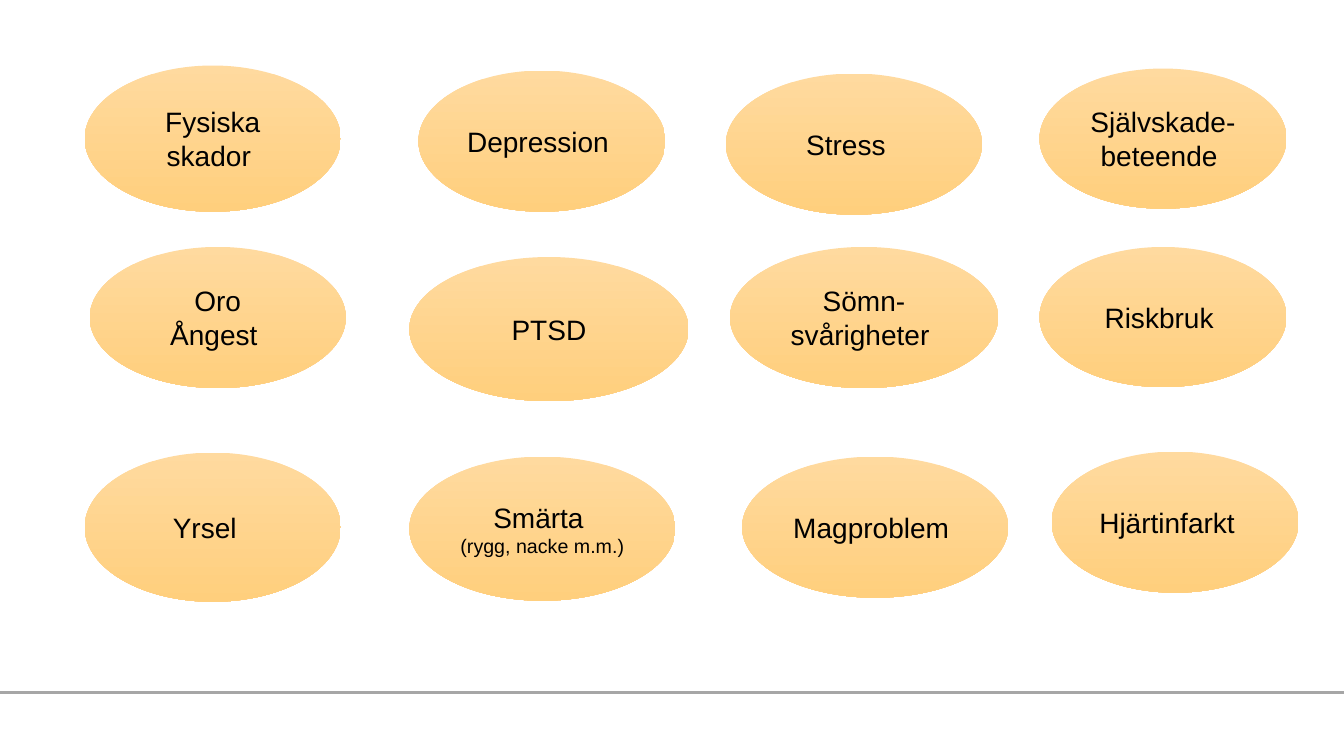
from lxml import etree
from pptx import Presentation
from pptx import util as u
from pptx.dml.color import RGBColor
from pptx.enum import shapes, text
from pptx.oxml.ns import qn

PEACH = RGBColor(0xFF, 0xDA, 0x9F)
AMBER = RGBColor(0xFF, 0xCF, 0x7D)
BLACK = RGBColor(0, 0, 0)
GREY = RGBColor(0xA6, 0xA6, 0xA6)

SIDE_INSET = 0.1
LEFT_SHIFT = 0.08  # extra right inset for labels set left of centre

# Each symptom: left, top, width, height, label lines, extra right inset
SYMPTOMS = [
    # Top row
    (0.84, 0.65, 2.54, 1.45, ["Fysiska skador "], 0),
    (4.15, 0.7, 2.45, 1.4, ["Depression "], 0),
    (7.2, 0.73, 2.54, 1.4, ["Stress "], LEFT_SHIFT),
    (10.31, 0.68, 2.45, 1.39, ["Självskade-beteende "], 0),
    # Middle row
    (0.89, 2.45, 2.54, 1.4, ["Oro", "Ångest "], 0),
    (4.06, 2.55, 2.77, 1.43, ["PTSD"], 0),
    (7.24, 2.45, 2.66, 1.4, ["Sömn-", "svårigheter "], 0),
    (10.31, 2.45, 2.45, 1.39, ["Riskbruk "], 0),
    # Bottom row
    (0.84, 4.49, 2.54, 1.48, ["Yrsel "], LEFT_SHIFT),
    (4.06, 4.53, 2.64, 1.43, ["Smärta "], 0),
    (7.36, 4.53, 2.64, 1.4, ["Magproblem "], 0),
    (10.43, 4.48, 2.45, 1.4, ["Hjärtinfarkt "], LEFT_SHIFT),
]
DETAILS = {"Smärta ": "(rygg, nacke m.m.) "}


def add_footer_rule(page, top, width):
    rule = page.shapes.add_connector(
        shapes.MSO_CONNECTOR.STRAIGHT,
        0, u.Inches(top), width, u.Inches(top))
    rule.line.color.rgb = GREY
    rule.line.width = u.Pt(1.5)
    etree.SubElement(rule._element.spPr, qn("a:effectLst"))


def add_symptom(page, left, top, width, height, lines, extra_inset):
    oval = page.shapes.add_shape(
        shapes.MSO_SHAPE.OVAL,
        *(u.Inches(length) for length in (left, top, width, height)))
    oval.shadow.inherit = False
    oval.line.fill.background()

    # Vertical gradient, lightest at the top
    oval.fill.gradient()
    oval.fill.gradient_angle = 270
    for stop, colour in zip(oval.fill.gradient_stops, (PEACH, AMBER)):
        stop.color.rgb = colour

    # Label
    frame = oval.text_frame
    frame.word_wrap = True
    frame.vertical_anchor = text.MSO_ANCHOR.MIDDLE
    frame.margin_left = u.Inches(SIDE_INSET)
    frame.margin_right = u.Inches(SIDE_INSET + extra_inset)
    for number, line in enumerate(lines):
        para = frame.add_paragraph() if number else frame.paragraphs[0]
        para.alignment = text.PP_ALIGN.CENTER
        para.font.name = "Arial"
        para.font.size = u.Pt(20)
        para.font.color.rgb = BLACK
        para.add_run().text = line
        if line in DETAILS:
            para.add_line_break()
            span = para.add_run()
            span.text = DETAILS[line]
            span.font.size = u.Pt(14)


def main():
    deck = Presentation()
    deck.slide_width = u.Inches(13.33)
    deck.slide_height = u.Inches(7.5)
    page = deck.slides.add_slide(deck.slide_layouts[6])
    add_footer_rule(page, 6.87, deck.slide_width)
    for symptom in SYMPTOMS:
        add_symptom(page, *symptom)
    deck.save("out.pptx")


if __name__ == "__main__":
    main()
